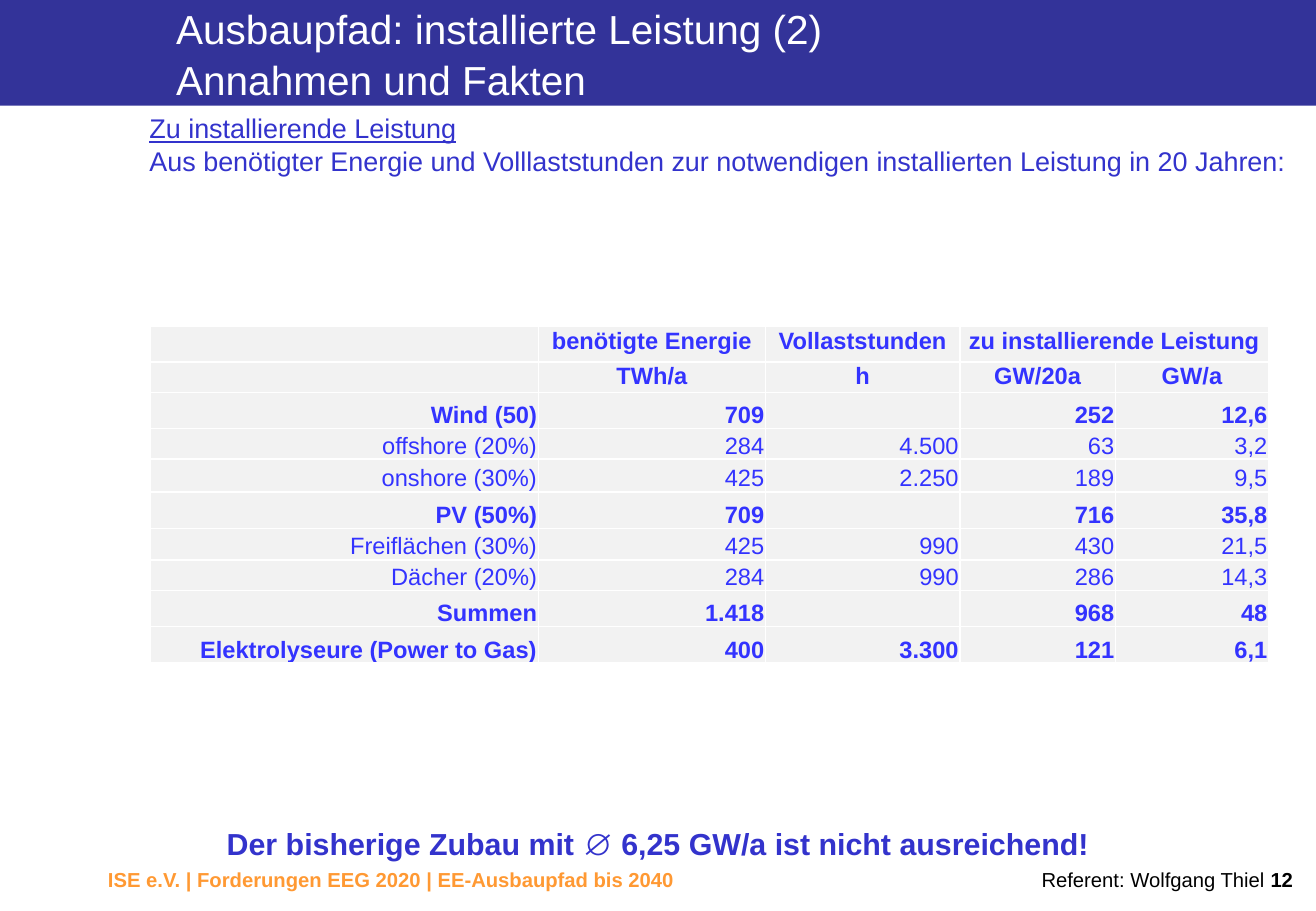
from copy import deepcopy
from dataclasses import dataclass

from lxml.etree import SubElement
from pptx import Presentation
from pptx.dml.color import RGBColor
from pptx.enum.shapes import MSO_SHAPE
from pptx.enum.text import MSO_ANCHOR, MSO_AUTO_SIZE, PP_ALIGN
from pptx.oxml.ns import qn
from pptx.util import Inches, Pt


@dataclass(frozen=True)
class Theme:
    font: str = "Arial"
    band: str = "333399"
    text: str = "3333CC"
    table_text: str = "3333FF"
    cell: str = "F2F2F2"
    white: str = "FFFFFF"
    black: str = "000000"
    orange: str = "FF9933"
    title_size: int = 24
    message_size: int = 18
    body_size: int = 16
    table_size: int = 14
    footer_size: int = 12


class Page:
    def __init__(self, deck, theme):
        self.theme = theme
        self.slide = deck.slides.add_slide(deck.slide_layouts[1])
        self.shapes = self.slide.shapes

    def style(self, span, size, color, **extra):
        formats = {"name": self.theme.font, "size": Pt(size), **extra}
        for name, value in formats.items():
            setattr(span.font, name, value)
        span.font.color.rgb = RGBColor.from_string(color)

    def place(self, box, left, top, width, height):
        for name, value in zip(("left", "top", "width", "height"), (left, top, width, height)):
            setattr(box, name, Inches(value))

    def fill_text(self, box, paragraphs, size, color, align=PP_ALIGN.LEFT, spacing=1.0, inset=None):
        frame = box.text_frame
        formats = {"word_wrap": True, "auto_size": MSO_AUTO_SIZE.NONE, "vertical_anchor": MSO_ANCHOR.TOP}
        if inset is not None:
            for side in ("left", "right", "top", "bottom"):
                formats[f"margin_{side}"] = Inches(inset)
        for name, value in formats.items():
            setattr(frame, name, value)
        for index, spans in enumerate(paragraphs):
            para = frame.paragraphs[0] if index == 0 else frame.add_paragraph()
            layout = {"alignment": align, "line_spacing": spacing, "space_before": Pt(0)}
            for name, value in layout.items():
                setattr(para, name, value)
            for text, extra in spans:
                span = para.add_run()
                span.text = text
                self.style(span, size, color, **extra)

    def band(self, left, top, width, height):
        band = self.shapes.add_shape(
            MSO_SHAPE.RECTANGLE, Inches(left), Inches(top), Inches(width), Inches(height))
        band.shadow.inherit = False
        band.fill.solid()
        band.fill.fore_color.rgb = RGBColor.from_string(self.theme.band)
        band.line.fill.background()
        self.shapes._spTree.insert(2, band._element)

    def title(self, lines, position):
        box = self.shapes.title
        self.place(box, *position)
        self.fill_text(box, [[]], self.theme.title_size, self.theme.white, spacing=1.05, inset=0)
        para = box.text_frame.paragraphs[0]
        para.text = "\v".join(lines)
        for span in para.runs:
            self.style(span, self.theme.title_size, self.theme.white)
        for line_break in para._p.findall(qn("a:br")):
            line_break.append(deepcopy(para.runs[0]._r.get_or_add_rPr()))

    def body(self, paragraphs, position):
        box = self.slide.placeholders[1]
        self.place(box, *position)
        self.fill_text(box, paragraphs, self.theme.body_size, self.theme.text)
        for para in box.text_frame.paragraphs:
            properties = para._p.get_or_add_pPr()
            properties.set("marL", "0")
            properties.set("indent", "0")
            SubElement(properties, qn("a:buNone"))

    def text(self, spans, position, size, color, **layout):
        box = self.shapes.add_textbox(*map(Inches, position))
        self.fill_text(box, [spans], size, color, **layout)

    def cell(self, cell, text, bold, align, anchor):
        formats = {"margin_left": Inches(0.01), "margin_right": Inches(0.01),
                   "margin_top": Inches(0.01), "margin_bottom": 0, "vertical_anchor": anchor}
        for name, value in formats.items():
            setattr(cell, name, value)
        properties = cell._tc.get_or_add_tcPr()
        for side in ("lnL", "lnR", "lnT", "lnB"):
            border = SubElement(properties, qn(f"a:{side}"), w=str(Pt(1)))
            fill = SubElement(border, qn("a:solidFill"))
            SubElement(fill, qn("a:srgbClr"), val=self.theme.white)
        cell.fill.solid()
        cell.fill.fore_color.rgb = RGBColor.from_string(self.theme.cell)
        para = cell.text_frame.paragraphs[0]
        para.alignment = align
        if text:
            span = para.add_run()
            span.text = text
            self.style(span, self.theme.table_size, self.theme.table_text, bold=bold)
        else:
            SubElement(para._p, qn("a:endParaRPr"), sz=str(self.theme.table_size * 100))

    def table(self, rows, left, top, widths, heights, header_rows, light_rows):
        table = self.shapes.add_table(
            len(rows), len(widths), Inches(left), Inches(top),
            Inches(sum(widths)), Inches(sum(heights))).table
        table.first_row = False
        table.horz_banding = False
        for column, width in zip(table.columns, widths):
            column.width = Inches(width)
        for index, (values, height) in enumerate(zip(rows, heights)):
            table.rows[index].height = Inches(height)
            header = index < header_rows
            align = PP_ALIGN.CENTER if header else PP_ALIGN.RIGHT
            anchor = MSO_ANCHOR.TOP if header else MSO_ANCHOR.BOTTOM
            for column, text in enumerate(values):
                self.cell(table.cell(index, column), text, index not in light_rows, align, anchor)
        table.cell(0, 3).merge(table.cell(0, 4))


def main():
    deck = Presentation()
    deck.slide_width, deck.slide_height = Inches(10.83), Inches(7.5)
    theme = Theme()
    page = Page(deck, theme)

    page.band(-0.01, 0, 10.84, 0.87)
    page.title(["Ausbaupfad: installierte Leistung (2)", "Annahmen und Fakten"],
               (1.45, 0.01, 8.16, 0.81))
    page.body([
        [("Zu installierende Leistung", {"underline": True})],
        [("Aus benötigter Energie und Volllaststunden zur notwendigen "
          "installierten Leistung in 20 Jahren:", {})],
    ], (1.13, 0.87, 9.59, 0.64))

    rows = [
        ("", "benötigte Energie", "Vollaststunden", "zu installierende Leistung", ""),
        ("", "TWh/a", "h", "GW/20a", "GW/a"),
        ("Wind (50)", "709", "", "252", "12,6"),
        ("offshore (20%)", "284", "4.500", "63", "3,2"),
        ("onshore (30%)", "425", "2.250", "189", "9,5"),
        ("PV (50%)", "709", "", "716", "35,8"),
        ("Freiflächen (30%)", "425", "990", "430", "21,5"),
        ("Dächer (20%)", "284", "990", "286", "14,3"),
        ("Summen", "1.418", "", "968", "48"),
        ("Elektrolyseure (Power to Gas)", "400", "3.300", "121", "6,1"),
    ]
    page.table(rows, 1.24, 2.69, (3.19, 1.87, 1.6, 1.28, 1.26),
               (0.29, 0.25, 0.3, 0.25, 0.27, 0.3, 0.26, 0.25, 0.3, 0.3),
               header_rows=2, light_rows={3, 4, 6, 7})

    bold = {"bold": True}
    page.text([("Der bisherige Zubau mit ∅ 6,25 GW/a ist nicht ausreichend!", bold)],
              (0, 6.72, 10.83, 0.44), theme.message_size, theme.text,
              align=PP_ALIGN.CENTER, inset=0.07)
    page.text([("ISE e.V. | Forderungen EEG 2020 | EE-Ausbaupfad bis 2040", bold)],
              (0.79, 7.09, 7.22, 0.3), theme.footer_size, theme.orange)
    page.text([("Referent: Wolfgang Thiel ", {}), ("12", bold)],
              (8.01, 7.11, 2.73, 0.28), theme.footer_size, theme.black,
              align=PP_ALIGN.RIGHT, spacing=0.9)

    deck.save("out.pptx")


if __name__ == "__main__":
    main()
